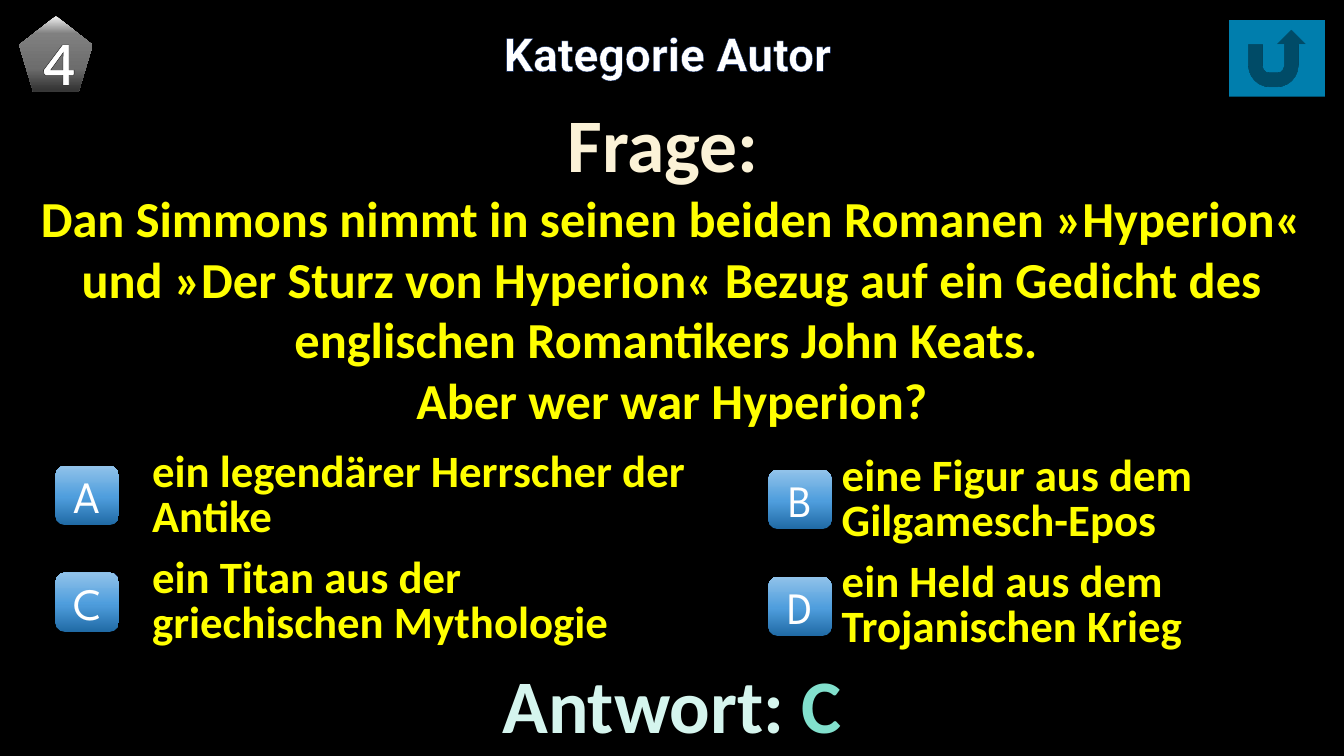
from pptx import Presentation
from pptx.dml.color import RGBColor
from pptx.enum.shapes import MSO_SHAPE as Shape
from pptx.enum.text import MSO_ANCHOR as Anchor, PP_ALIGN as Align
from pptx.oxml import parse_xml
from pptx.oxml.ns import nsdecls
from pptx.util import Inches, Pt

BLACK = RGBColor(0, 0, 0)
WHITE = RGBColor(255, 255, 255)
YELLOW = RGBColor(255, 255, 0)
CREAM = RGBColor(0xFB, 0xF2, 0xD7)
MINT = RGBColor(0xD5, 0xF5, 0xEE)
TEAL = RGBColor(0x82, 0xE0, 0xCD)
NAVY = RGBColor(0, 0x20, 0x60)
CYAN = RGBColor(0, 0xB0, 0xF0)
STEEL = [(0, "F2F2F2"), (23, "808080"), (69, "6D6D6D"), (97, "363636")]
BLUES = [(0, "206AA5"), (48, "4F9EDD"), (100, "92C3EA")]

TITLE = "Kategorie Autor"
NUMBER = "4"
QUESTION = (
    "Dan Simmons nimmt in seinen beiden Romanen »Hyperion« und »Der Sturz "
    "von Hyperion« Bezug auf ein Gedicht des englischen Romantikers John "
    "Keats. \nAber wer war Hyperion?"
)
# Each column: text left, top, width, badge left, choices
COLUMNS = [
    (1.41, 4.43, 5.52, 0.55, [
        ("A", "ein legendärer Herrscher der Antike"),
        ("C", "ein Titan aus der griechischen Mythologie")]),
    (8.25, 4.47, 4.79, 7.62, [
        ("B", "eine Figur aus dem Gilgamesch-Epos"),
        ("D", "ein Held aus dem Trojanischen Krieg")]),
]
BADGE_DROP, ROW_STEP = 0.19, 1.06


def write(para, text, size, color, font="Calibri", bold=True,
          align=Align.CENTER, edge=None):
    """Add text to a paragraph; edge is an outline (color, width in points)."""
    para.alignment = align
    for i, line in enumerate(text.split("\n")):
        if i:
            para.add_line_break()
        run = para.add_run()
        run.text = line
        run.font.size, run.font.bold, run.font.name = Pt(size), bold, font
        run.font.color.rgb = color
        if edge:
            run.font._element.insert(0, parse_xml(
                f'<a:ln {nsdecls("a")} w="{Pt(edge[1])}"><a:solidFill>'
                f'<a:srgbClr val="{edge[0]}"/></a:solidFill></a:ln>'))


def box(left, top, width, height):
    frame = slide.shapes.add_textbox(
        Inches(left), Inches(top), Inches(width), Inches(height)).text_frame
    frame.word_wrap = True
    return frame


def plain(kind, left, top, width, height):
    """Add a shape without line or shadow."""
    shape = slide.shapes.add_shape(
        kind, Inches(left), Inches(top), Inches(width), Inches(height))
    shape.shadow.inherit = False
    shape.line.fill.background()
    return shape


def shade(shape, stops, angle):
    """Fill with a gradient; the angle runs clockwise."""
    shape.fill.background()
    marks = "".join(f'<a:gs pos="{pos * 1000}"><a:srgbClr val="{color}"/></a:gs>'
                    for pos, color in stops)
    grad = parse_xml(f'<a:gradFill {nsdecls("a")}><a:gsLst>{marks}</a:gsLst>'
                     f'<a:lin ang="{angle * 60000}" scaled="0"/></a:gradFill>')
    props = shape._element.spPr
    props.replace(props.find("{*}noFill"), grad)


deck = Presentation()
deck.slide_width, deck.slide_height = Inches(13.33), Inches(7.5)
slide = deck.slides.add_slide(deck.slide_layouts[5])
slide.background.fill.solid()
slide.background.fill.fore_color.rgb = BLACK

title = slide.shapes.title
title.left, title.top = Inches(0.27), Inches(0.2)
title.width, title.height = Inches(12.7), Inches(0.66)
title.text_frame.vertical_anchor = Anchor.TOP
write(title.text_frame.paragraphs[0], TITLE, 33, WHITE, "Roboto",
      edge=(NAVY, 0.52))

ask = box(0, 0.91, 13.33, 3.43)
write(ask.paragraphs[0], "Frage: ", 54, CREAM)
write(ask.add_paragraph(), QUESTION, 36, YELLOW)

reply = box(0, 6.48, 13.33, 1.01).paragraphs[0]
write(reply, "Antwort: ", 54, MINT)
write(reply, "C", 54, TEAL)

back = plain(Shape.ACTION_BUTTON_RETURN, 12.19, 0.2, 0.95, 0.76)
back.fill.solid()
back.fill.fore_color.rgb = CYAN
back._element.spPr.find("{*}solidFill")[0].append(
    parse_xml(f'<a:alpha {nsdecls("a")} val="72000"/>'))

badge = plain(Shape.REGULAR_PENTAGON, 0.19, 0.16, 0.73, 0.75)
shade(badge, STEEL, 90)
badge.text_frame.vertical_anchor = Anchor.MIDDLE
write(badge.text_frame.paragraphs[0], NUMBER, 40, WHITE, "Lato",
      edge=(BLACK, 1.06))

for left, top, width, key_left, choices in COLUMNS:
    frame = box(left, top, width, 2.06)
    for row, (letter, choice) in enumerate(choices):
        para = frame.add_paragraph() if row else frame.paragraphs[0]
        para.line_spacing, para.space_after = Pt(32), Pt(12)
        write(para, choice, 32, YELLOW, align=Align.LEFT)
        key = plain(Shape.ROUNDED_RECTANGLE, key_left,
                    top + BADGE_DROP + row * ROW_STEP, 0.63, 0.59)
        shade(key, BLUES, 270)
        key.text_frame.vertical_anchor = Anchor.MIDDLE
        write(key.text_frame.paragraphs[0], letter, 32, WHITE,
              "League Spartan", bold=False)

deck.save("out.pptx")
